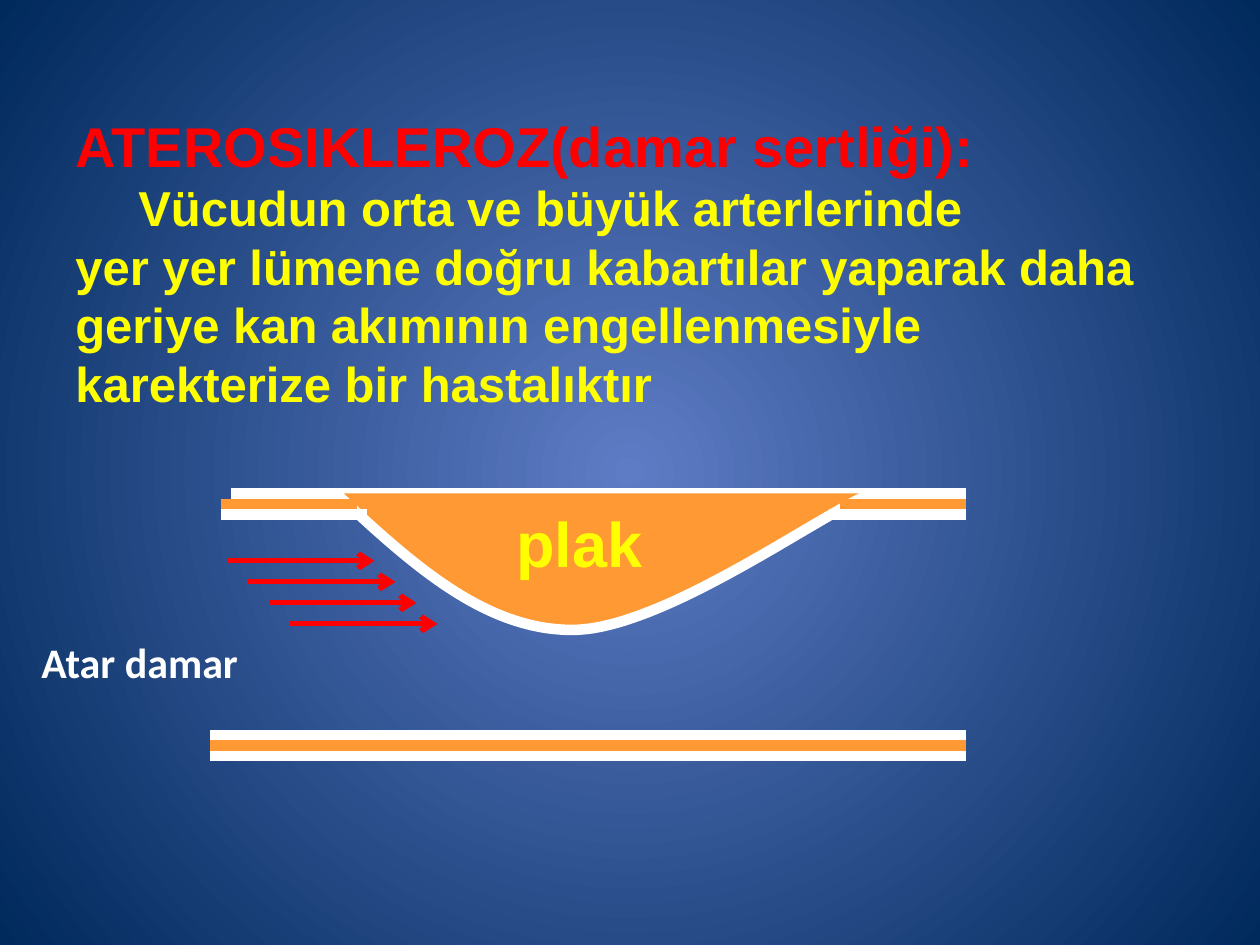
from typing import NamedTuple

from lxml import etree
from pptx import Presentation
from pptx.dml.color import RGBColor
from pptx.enum import shapes, text
from pptx.oxml.ns import qn
from pptx.util import Pt

WHITE, ORANGE, RED, YELLOW = "FFFFFF", "FF9933", "FF0000", "FFFF00"


class Line(NamedTuple):
    x1: float
    x2: float
    y: float
    color: str
    width: float = 6
    arrow: bool = False


class Para(NamedTuple):
    words: str
    size: float
    color: str
    spacing: float | None = None


def rgb(color: str) -> RGBColor:
    return RGBColor.from_string(color)


def set_background(s, center: str, edge: str) -> None:
    """Fill the slide with a gradient that spreads in circles from its middle."""
    fill = s.background.fill
    fill.gradient()
    for stop, color in zip(fill.gradient_stops, (center, edge)):
        stop.color.rgb = rgb(color)
    grad = s.element.find(".//" + qn("a:gradFill"))
    grad.remove(grad.find(qn("a:lin")))
    circle = etree.SubElement(grad, qn("a:path"), path="circle")
    etree.SubElement(circle, qn("a:fillToRect"),
                     {side: "50000" for side in "ltrb"})


def add_line(s, line: Line) -> None:
    c = s.shapes.add_connector(shapes.MSO_CONNECTOR.STRAIGHT, Pt(line.x1),
                               Pt(line.y), Pt(line.x2), Pt(line.y))
    c.line.color.rgb = rgb(line.color)
    c.line.width = Pt(line.width)
    if line.arrow:
        etree.SubElement(c.line._get_or_add_ln(), qn("a:tailEnd"), type="arrow")
    etree.SubElement(c._element.spPr, qn("a:effectLst"))


def bezier(points: list[tuple[float, float]], steps: int = 40) -> list[tuple[int, int]]:
    """Sample a cubic curve, leaving out its start."""
    def at(t: float, axis: int) -> int:
        a, b, c, d = (p[axis] for p in points)
        u = 1 - t
        return Pt(u**3 * a + 3 * u * u * t * b + 3 * u * t * t * c + t**3 * d)

    return [(at(i / steps, 0), at(i / steps, 1)) for i in range(1, steps + 1)]


def add_plaque(s) -> None:
    start, bottom, end = (192, 282), (327, 360), (498, 282)
    fb = s.shapes.build_freeform(Pt(start[0]), Pt(start[1]))
    fb.add_line_segments(
        bezier([start, (234, 321), (276, 360), bottom])
        + bezier([bottom, (378, 360), (467, 295), end]), close=False)
    sp = fb.convert_to_shape()
    sp.shadow.inherit = False
    sp.fill.solid()
    sp.fill.fore_color.rgb = rgb(ORANGE)
    sp.line.color.rgb = rgb(WHITE)
    sp.line.width = Pt(6)


def add_text(s, paras: list[Para], *, left: float, top: float, width: float,
             height: float, font: str = "Arial") -> None:
    tf = s.shapes.add_textbox(Pt(left), Pt(top), Pt(width), Pt(height)).text_frame
    tf.word_wrap = False
    tf.auto_size = text.MSO_AUTO_SIZE.SHAPE_TO_FIT_TEXT
    for i, para in enumerate(paras):
        p = tf.add_paragraph() if i else tf.paragraphs[0]
        if para.spacing:
            p.line_spacing = Pt(para.spacing)
        r = p.add_run()
        r.text = para.words
        r.font.name, r.font.size, r.font.bold = font, Pt(para.size), True
        r.font.color.rgb = rgb(para.color)


def main() -> None:
    prs = Presentation()
    prs.slide_width, prs.slide_height = Pt(720), Pt(540)
    s = prs.slides.add_slide(prs.slide_layouts[6])
    set_background(s, "5E7CC5", "00295C")

    definition = ["\tVücudun orta ve büyük arterlerinde",
                  "yer yer lümene doğru kabartılar yaparak daha",
                  "geriye kan akımının engellenmesiyle",
                  "karekterize bir hastalıktır"]
    add_text(s, [Para("ATEROSIKLEROZ(damar sertliği):", 32, RED)]
             + [Para(words, 28, YELLOW, 33.4) for words in definition],
             left=36, top=60, width=628.5, height=180)

    lower_wall = [Line(120, 552, 420, WHITE), Line(120, 552, 432, WHITE),
                  Line(120, 552, 426, ORANGE)]
    upper_wall = [Line(126, 210, 294, WHITE), Line(126, 204, 288, ORANGE),
                  Line(474, 552, 294, WHITE), Line(480, 552, 288, ORANGE)]
    blood_flow = [Line(129.6 + 12 * i, 214 + 12 * i, 320.5 + 12 * i, RED, 3, True)
                  for i in range(4)]

    add_line(s, Line(132, 552, 282, WHITE))
    add_plaque(s)
    for line in lower_wall + upper_wall:
        add_line(s, line)
    add_text(s, [Para("plak", 36, YELLOW)],
             left=288, top=284.5, width=86.4, height=50.4)
    for line in blood_flow:
        add_line(s, line)
    add_text(s, [Para("Atar damar", 24, WHITE)],
             left=16.6, top=360, width=128, height=36, font="Calibri")
    prs.save("out.pptx")


if __name__ == "__main__":
    main()
